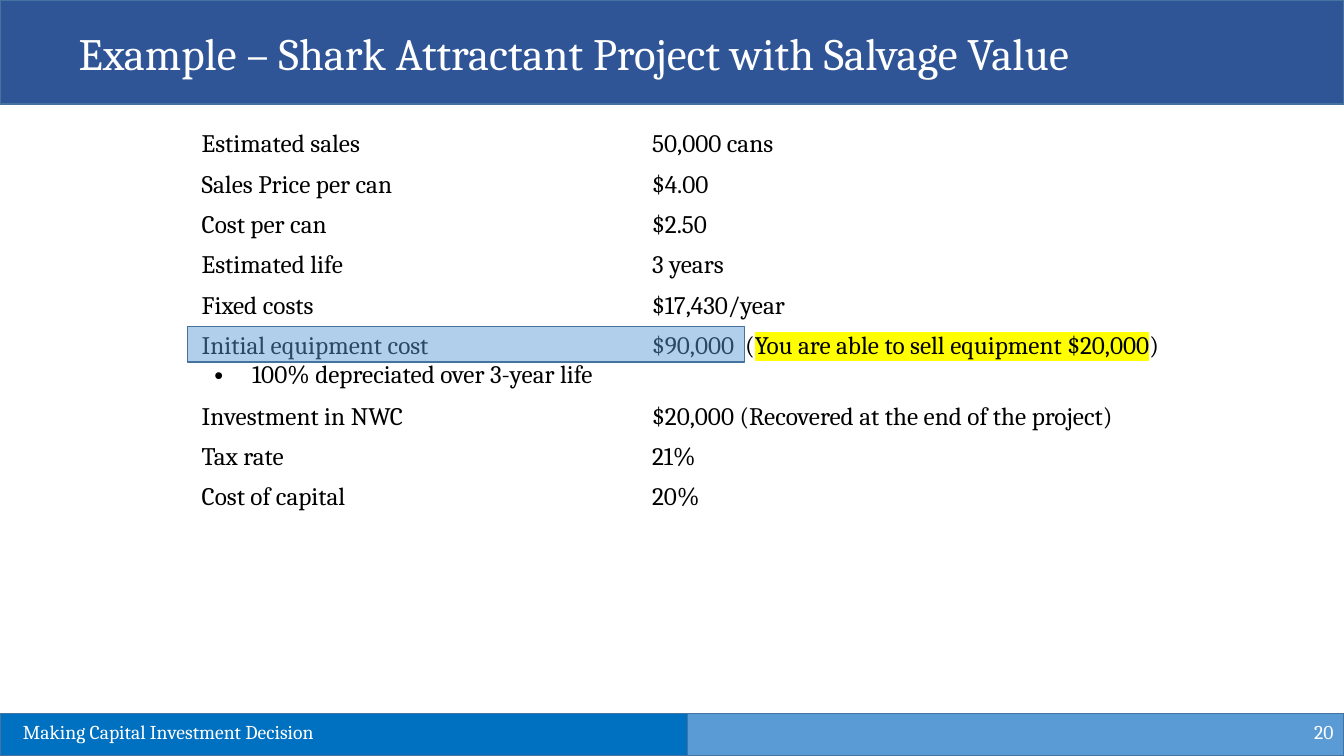
import pptx
import pptx.dml.color
import pptx.enum.shapes
import pptx.enum.text
import pptx.oxml
import pptx.oxml.ns
import pptx.util
from pptx.util import Cm

RGBColor = pptx.dml.color.RGBColor
NAVY = RGBColor(0x2F, 0x55, 0x97)
BLUE = RGBColor(0x00, 0x70, 0xC0)
LIGHT_BLUE = RGBColor(0x5B, 0x9B, 0xD5)
OUTLINE = RGBColor(0x43, 0x73, 0x9E)
WHITE = RGBColor(0xFF, 0xFF, 0xFF)
BLACK = RGBColor(0x00, 0x00, 0x00)
NAMESPACE = pptx.oxml.ns.nsdecls("a")

SLIDE_WIDTH = 33.87
FOOTER_TOP = 17.98
FOOTER_SPLIT = 17.33

ASSUMPTIONS = [
    ("Estimated sales", "50,000 cans"),
    ("Sales Price per can", "$4.00"),
    ("Cost per can", "$2.50"),
    ("Estimated life", "3 years"),
    ("Fixed costs", "$17,430/year"),
    ("Initial equipment cost", "$90,000  ("),
    ("Investment in NWC", "$20,000 (Recovered at the end of the project)"),
    ("Tax rate", "21%"),
    ("Cost of capital", "20%"),
]
EQUIPMENT_ROW = 5


def add_bar(left, top, width, height, color):
    bar = slide.shapes.add_shape(
        pptx.enum.shapes.MSO_SHAPE.RECTANGLE, Cm(left), Cm(top), Cm(width), Cm(height))
    bar.shadow.inherit = False
    bar.fill.solid()
    bar.fill.fore_color.rgb = color
    bar.line.color.rgb = OUTLINE
    bar.line.width = pptx.util.Pt(1)
    return bar


def format_paragraph(paragraph, size, color, alignment=pptx.enum.text.PP_ALIGN.LEFT):
    paragraph.alignment = alignment
    paragraph.font.name = "Cambria"
    paragraph.font.size = pptx.util.Pt(size)
    paragraph.font.color.rgb = color


presentation = pptx.Presentation()
presentation.slide_width = Cm(SLIDE_WIDTH)
presentation.slide_height = Cm(19.05)
slide = presentation.slides.add_slide(presentation.slide_layouts.get_by_name("Title Only"))

# Header: the bar goes behind the title
title = slide.shapes.title
header_bar = add_bar(0, 0, SLIDE_WIDTH, 2.62, NAVY)
title.element.addprevious(header_bar.element)
title.left, title.top, title.width, title.height = Cm(1.73), Cm(0.53), Cm(30.68), Cm(1.63)
title.text_frame.text = "Example – Shark Attractant Project with Salvage Value"
title.text_frame.vertical_anchor = pptx.enum.text.MSO_ANCHOR.TOP
title.text_frame.auto_size = pptx.enum.text.MSO_AUTO_SIZE.NONE
format_paragraph(title.text_frame.paragraphs[0], 32, WHITE)

# Footer
add_bar(0, FOOTER_TOP, FOOTER_SPLIT, 1.07, BLUE)
add_bar(FOOTER_SPLIT, FOOTER_TOP, SLIDE_WIDTH - FOOTER_SPLIT, 1.07, LIGHT_BLUE)
footer_texts = [
    ("20", 26.24, 17.93, 7.62, 1.02, pptx.enum.text.PP_ALIGN.RIGHT,
     pptx.enum.text.MSO_ANCHOR.MIDDLE),
    ("Making Capital Investment Decision", 0.33, 18.01, 14.07, 0.86,
     pptx.enum.text.PP_ALIGN.LEFT, pptx.enum.text.MSO_ANCHOR.TOP),
]
for text, left, top, width, height, alignment, anchor in footer_texts:
    text_box = slide.shapes.add_textbox(Cm(left), Cm(top), Cm(width), Cm(height))
    text_box.text_frame.word_wrap = True
    text_box.text_frame.vertical_anchor = anchor
    text_box.text_frame.text = text
    format_paragraph(text_box.text_frame.paragraphs[0], 14, WHITE, alignment)

# Project assumptions
table = slide.shapes.add_table(
    len(ASSUMPTIONS), 2, Cm(4.83), Cm(3.15), Cm(27.58), Cm(9.9)).table
table.first_row = False
table.horz_banding = False
table.columns[0].width = Cm(11.35)
table.columns[1].width = Cm(16.23)
for row_index, texts in enumerate(ASSUMPTIONS):
    table.rows[row_index].height = Cm(1.6 if row_index == EQUIPMENT_ROW else 0.97)
    for column_index, text in enumerate(texts):
        cell = table.cell(row_index, column_index)
        cell.fill.background()
        cell.text_frame.text = text
        format_paragraph(cell.text_frame.paragraphs[0], 18, BLACK)

depreciation = table.cell(EQUIPMENT_ROW, 0).text_frame.add_paragraph()
depreciation.text = "100% depreciated over 3-year life"
format_paragraph(depreciation, 18, BLACK)
properties = depreciation._p.get_or_add_pPr()
properties.set("marL", str(Cm(1.27)))
properties.set("indent", str(-Cm(0.95)))
for position, bullet in enumerate(['<a:buFont %s typeface="Arial"/>', '<a:buChar %s char="•"/>']):
    properties.insert(position, pptx.oxml.parse_xml(bullet % NAMESPACE))

equipment_cost = table.cell(EQUIPMENT_ROW, 1).text_frame.paragraphs[0]
resale = equipment_cost.add_run()
resale.text = "You are able to sell equipment $20,000"
resale.font._element.append(pptx.oxml.parse_xml(
    f'<a:highlight {NAMESPACE}><a:srgbClr val="FFFF00"/></a:highlight>'))
equipment_cost.add_run().text = ")"

# Translucent marker over the equipment cost
marker = add_bar(4.72, 8.23, 14.05, 0.89, LIGHT_BLUE)
marker_color = marker.element.spPr.find(
    pptx.oxml.ns.qn("a:solidFill")).find(pptx.oxml.ns.qn("a:srgbClr"))
marker_color.append(pptx.oxml.parse_xml(f'<a:alpha {NAMESPACE} val="47000"/>'))

presentation.save("out.pptx")
